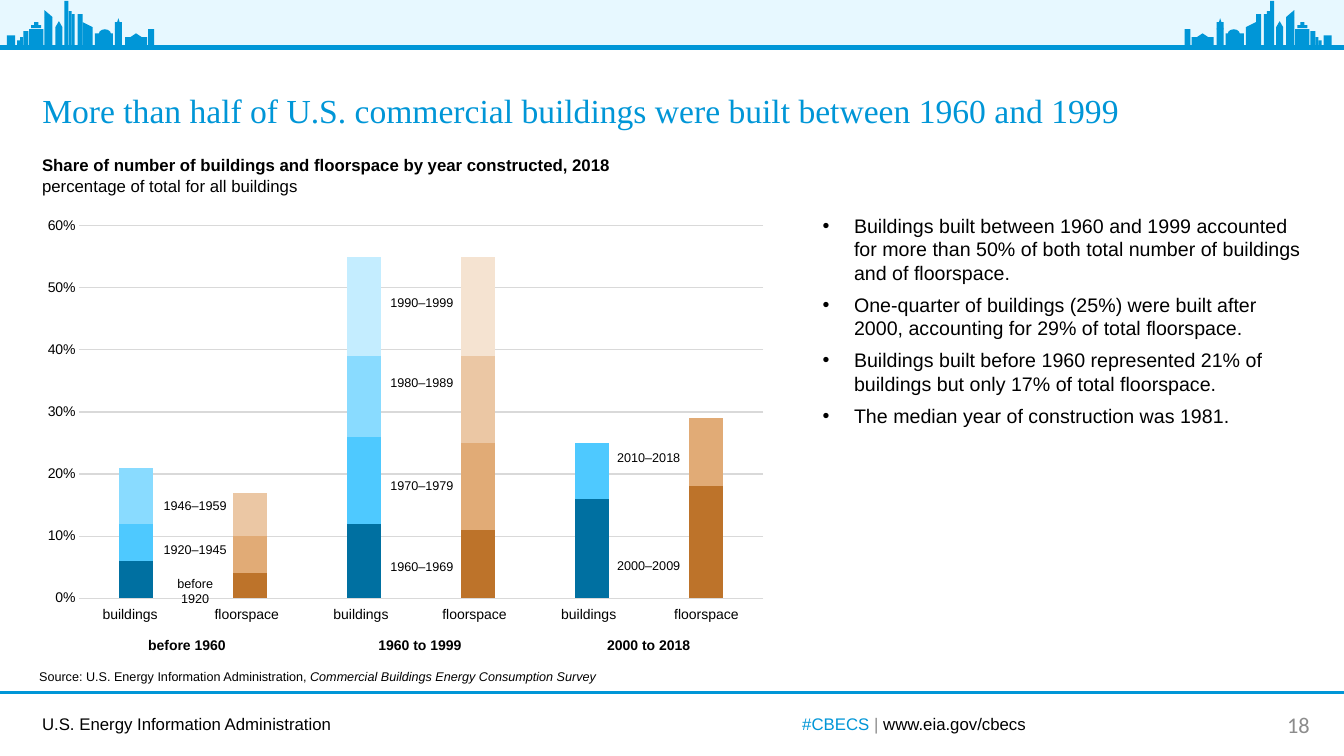
from dataclasses import dataclass

from lxml.etree import SubElement
from pptx import Presentation
from pptx.chart.data import CategoryChartData
from pptx.dml.color import RGBColor
from pptx.enum.chart import XL_CHART_TYPE, XL_TICK_MARK
from pptx.enum.shapes import MSO_CONNECTOR, MSO_SHAPE
from pptx.enum.text import MSO_ANCHOR, MSO_AUTO_SIZE, PP_ALIGN
from pptx.oxml.ns import qn
from pptx.util import Pt


@dataclass(frozen=True)
class Theme:
    accent: str = "0096D7"
    sky: str = "E7F8FF"
    ink: str = "000000"
    muted: str = "8C8C8C"
    grid: str = "D9D9D9"
    blues: tuple = ("0070A1", "4EC9FF", "89DBFF", "C4EDFF")
    browns: tuple = ("BD732A", "E1AB76", "EBC7A4", "F5E3D1")
    sans: str = "Arial"
    serif: str = "Times New Roman"
    number: str = "Calibri"
    title: int = 24
    page: int = 16
    body: int = 14
    text: int = 12
    axis: int = 10
    small: int = 9


def rgb(color):
    return RGBColor.from_string(color)


class Deck:
    def __init__(self, theme):
        self.t = theme
        self.prs = Presentation()
        self.prs.slide_width, self.prs.slide_height = Pt(960), Pt(540)
        self.s = self.prs.slides.add_slide(self.prs.slide_layouts[1])

    def place(self, sp, x, y, w, h):
        sp.left, sp.top, sp.width, sp.height = Pt(x), Pt(y), Pt(w), Pt(h)

    def run(self, p, text, size, color=None, font=None, bold=False, italic=False):
        r = p.add_run()
        r.text = text
        r.font.size = Pt(size)
        r.font.name = font or self.t.sans
        r.font.color.rgb = rgb(color or self.t.ink)
        r.font.bold, r.font.italic = bold, italic

    def text(self, box, *lines, size, align=PP_ALIGN.LEFT, wrap=True, anchor=MSO_ANCHOR.TOP):
        """Each line is a list of (text, run options) pairs."""
        tf = self.s.shapes.add_textbox(*map(Pt, box)).text_frame
        tf.word_wrap, tf.vertical_anchor = wrap, anchor
        for i, runs in enumerate(lines):
            p = tf.paragraphs[0] if i == 0 else tf.add_paragraph()
            p.alignment = align
            for text, options in runs:
                self.run(p, text, size, **options)

    def title(self, text, box):
        sp = self.s.shapes.title
        self.place(sp, *box)
        tf = sp.text_frame
        tf.auto_size, tf.vertical_anchor = MSO_AUTO_SIZE.NONE, MSO_ANCHOR.BOTTOM
        p = tf.paragraphs[0]
        p.alignment = PP_ALIGN.LEFT
        self.run(p, text, self.t.title, self.t.accent, self.t.serif)

    def bullets(self, items, box):
        sp = self.s.placeholders[1]
        self.place(sp, *box)
        tf = sp.text_frame
        tf.auto_size = MSO_AUTO_SIZE.NONE
        for i, item in enumerate(items):
            p = tf.paragraphs[0] if i == 0 else tf.add_paragraph()
            p.space_before, p.space_after = Pt(0), Pt(6)
            pPr = p._p.get_or_add_pPr()
            pPr.set("marL", str(Pt(22.5)))
            pPr.set("indent", str(Pt(-22.5)))
            SubElement(pPr, qn("a:buFont")).set("typeface", self.t.sans)
            SubElement(pPr, qn("a:buChar")).set("char", "•")
            self.run(p, item, self.t.body)

    def shape(self, kind, x, y, w, h, color, flip=False):
        sp = self.s.shapes.add_shape(kind, Pt(x), Pt(y), Pt(w), Pt(h))
        sp.shadow.inherit = False
        sp.fill.solid()
        sp.fill.fore_color.rgb = rgb(color)
        sp.line.fill.background()
        if flip:
            sp.element.spPr.find(qn("a:xfrm")).set("flipH", "1")

    def rule(self, y, width):
        c = self.s.shapes.add_connector(MSO_CONNECTOR.STRAIGHT, 0, Pt(y), Pt(960), Pt(y))
        c.line.color.rgb, c.line.width = rgb(self.t.accent), Pt(width)
        SubElement(c.element.spPr, qn("a:effectLst"))

    def stacked_chart(self, rows, box, plot):
        data = CategoryChartData(number_format="0%")
        data.categories = [str(i + 1) for i in range(len(rows[0]))]
        for i, row in enumerate(rows, 1):
            data.add_series(f"Series {i}", row)
        chart = self.s.shapes.add_chart(
            XL_CHART_TYPE.COLUMN_STACKED, *map(Pt, box), data).chart
        chart.has_legend = chart.has_title = False
        chart.font.size, chart.font.name = Pt(self.t.axis), self.t.number
        chart.font.color.rgb = rgb(self.t.ink)
        # Axes
        chart.category_axis.visible = False
        axis = chart.value_axis
        axis.minimum_scale, axis.maximum_scale, axis.major_unit = 0, 0.6, 0.1
        axis.major_tick_mark = axis.minor_tick_mark = XL_TICK_MARK.NONE
        axis.format.line.fill.background()
        labels = axis.tick_labels
        labels.number_format, labels.number_format_is_linked = "0%", False
        labels.font.size, labels.font.name = Pt(self.t.axis), self.t.sans
        labels.font.color.rgb = rgb(self.t.ink)
        grid = axis.major_gridlines.format.line
        grid.color.rgb, grid.width = rgb(self.t.grid), Pt(0.75)
        # Blue for buildings, brown for floorspace
        bars = chart.plots[0]
        bars.gap_width, bars.overlap, bars.vary_by_categories = 230, 100, False
        for series, row, blue, brown in zip(bars.series, rows, self.t.blues, self.t.browns):
            series.format.fill.solid()
            series.format.fill.fore_color.rgb = rgb(blue)
            for i in range(1, len(row), 2):
                if row[i] is not None:
                    fill = series.points[i].format.fill
                    fill.solid()
                    fill.fore_color.rgb = rgb(brown)
        # Fixed plot area, so the labels stay beside their bars
        area = chart.element.chart.plotArea
        layout = area.find(qn("c:layout"))
        if layout is None:
            layout = SubElement(area, qn("c:layout"))
            area.insert(0, layout)
        manual = SubElement(layout, qn("c:manualLayout"))
        settings = [("layoutTarget", "inner"), ("xMode", "edge"), ("yMode", "edge")]
        for tag, value in settings + list(zip("xywh", plot)):
            SubElement(manual, qn(f"c:{tag}")).set("val", str(value))


RECT, TRI = MSO_SHAPE.RECTANGLE, MSO_SHAPE.ISOSCELES_TRIANGLE
RIGHT, OVAL = MSO_SHAPE.RIGHT_TRIANGLE, MSO_SHAPE.OVAL
SKYLINE = [
    (RECT, 5, 25.2, 5.8, 7.9), (RECT, 12.2, 28.8, 2.2, 4.3), (RECT, 14.4, 26.6, 2.2, 6.5),
    (RECT, 16.6, 22.3, 3.6, 10.8), (RECT, 20.9, 20.9, 10.1, 12.2), (RECT, 22.3, 18, 7.2, 2.2),
    (RECT, 24.5, 15.8, 2.9, 2.2), (RECT, 31.7, 12.2, 5.8, 20.9), (RIGHT, 31.7, 7.2, 5.8, 5),
    (TRI, 39.6, 15.1, 5, 4.3), (RECT, 39.6, 19.4, 5, 13.7), (RECT, 46.1, 0.7, 2.9, 32.4),
    (RECT, 49, 7.9, 2.2, 25.2), (RECT, 51.1, 10.1, 2.2, 23), (RECT, 55.4, 10.1, 3.6, 23),
    (RECT, 59, 19.4, 7.2, 13.7), (RIGHT, 59, 15.8, 7.2, 3.6), (RECT, 67.7, 23.8, 13, 9.3),
    (OVAL, 70.6, 20.9, 8.6, 6.5), (TRI, 82.1, 13, 5, 7.9), (RECT, 82.1, 15.8, 5, 17.3),
    (RECT, 89.3, 26.6, 15.8, 6.5), (TRI, 92.9, 23.8, 8.6, 2.9), (RECT, 105.8, 20.9, 4.3, 12.2),
]
SHARES = [
    (0.06, 0.04, 0.12, 0.11, 0.16, 0.18),
    (0.06, 0.06, 0.14, 0.14, 0.09, 0.11),
    (0.09, 0.07, 0.13, 0.14, None, None),
    (None, None, 0.16, 0.16, None, None),
]
# Period, its left, left of "buildings", left of "floorspace", decades with tops
PERIODS = [
    ("before 1960", 66.2, 66.2, 146.2,
     [("before 1920", 407.5), ("1920–1945", 383.8), ("1946–1959", 352)]),
    ("1960 to 1999", 232.6, 231.1, 308.9,
     [("1960–1969", 396), ("1970–1979", 337.7), ("1980–1989", 264.2), ("1990–1999", 207.4)]),
    ("2000 to 2018", 396, 393.8, 474.5, [("2000–2009", 394.6), ("2010–2018", 317.5)]),
]


def main():
    t = Theme()
    d = Deck(t)

    # Header band with a skyline mirrored at both ends
    d.shape(RECT, 0, 0, 960, 32.4, t.sky)
    d.rule(33.8, 3.5)
    for kind, x, y, w, h in SKYLINE:
        d.shape(kind, x, y, w, h, t.accent)
        d.shape(kind, 956.2 - x - w, y, w, h, t.accent, flip=True)

    # Title and takeaways
    d.title("More than half of U.S. commercial buildings were built between 1960 and 1999",
            (23, 36.7, 913.7, 59.8))
    d.bullets([
        "Buildings built between 1960 and 1999 accounted for more than 50% of both total "
        "number of buildings and of floorspace.",
        "One-quarter of buildings (25%) were built after 2000, accounting for 29% of total "
        "floorspace.",
        "Buildings built before 1960 represented 21% of buildings but only 17% of total "
        "floorspace.",
        "The median year of construction was 1981.",
    ], (580.3, 149, 362.9, 161.3))

    # Chart with its heading and labels
    d.text((23, 107.3, 480.2, 36),
           [("Share of number of buildings and floorspace by year constructed, 2018",
             {"bold": True})],
           [("percentage of total for all buildings", {})], size=t.text)
    d.stacked_chart(SHARES, (23, 150.5, 532.8, 288), (0.063, 0.038, 0.917, 0.923))
    for i, (period, left, buildings, floorspace, decades) in enumerate(PERIODS):
        for decade, top in decades:
            d.text((109.4 + 162 * i, top, 60, 18), [(decade, {})], size=t.small,
                   align=PP_ALIGN.CENTER, wrap=False)
        d.text((buildings, 429.1, 57.6, 19.4), [("buildings", {})], size=t.axis)
        d.text((floorspace, 429.1, 64.8, 19.4), [("floorspace", {})], size=t.axis)
        d.text((left, 451.4, 134.6, 19.4), [(period, {"bold": True})], size=t.axis,
               align=PP_ALIGN.CENTER)

    # Source and footer
    d.text((20.9, 474.5, 480.2, 18),
           [("Source: U.S. Energy Information Administration, ", {}),
            ("Commercial Buildings Energy Consumption Survey", {"italic": True})], size=t.small)
    d.rule(494.6, 2.25)
    d.text((23, 506.2, 266.4, 21.6), [("U.S. Energy Information Administration", {})],
           size=t.text)
    d.text((491, 502.6, 324, 28.8),
           [("#CBECS ", {"color": t.accent}), ("| ", {"color": t.muted}),
            ("www.eia.gov/cbecs", {})],
           size=t.text, align=PP_ALIGN.CENTER, anchor=MSO_ANCHOR.MIDDLE)
    d.text((905.8, 503.3, 43.2, 28.8), [("18", {"color": t.muted, "font": t.number})],
           size=t.page, align=PP_ALIGN.CENTER, anchor=MSO_ANCHOR.MIDDLE)

    d.prs.save("out.pptx")


if __name__ == "__main__":
    main()
